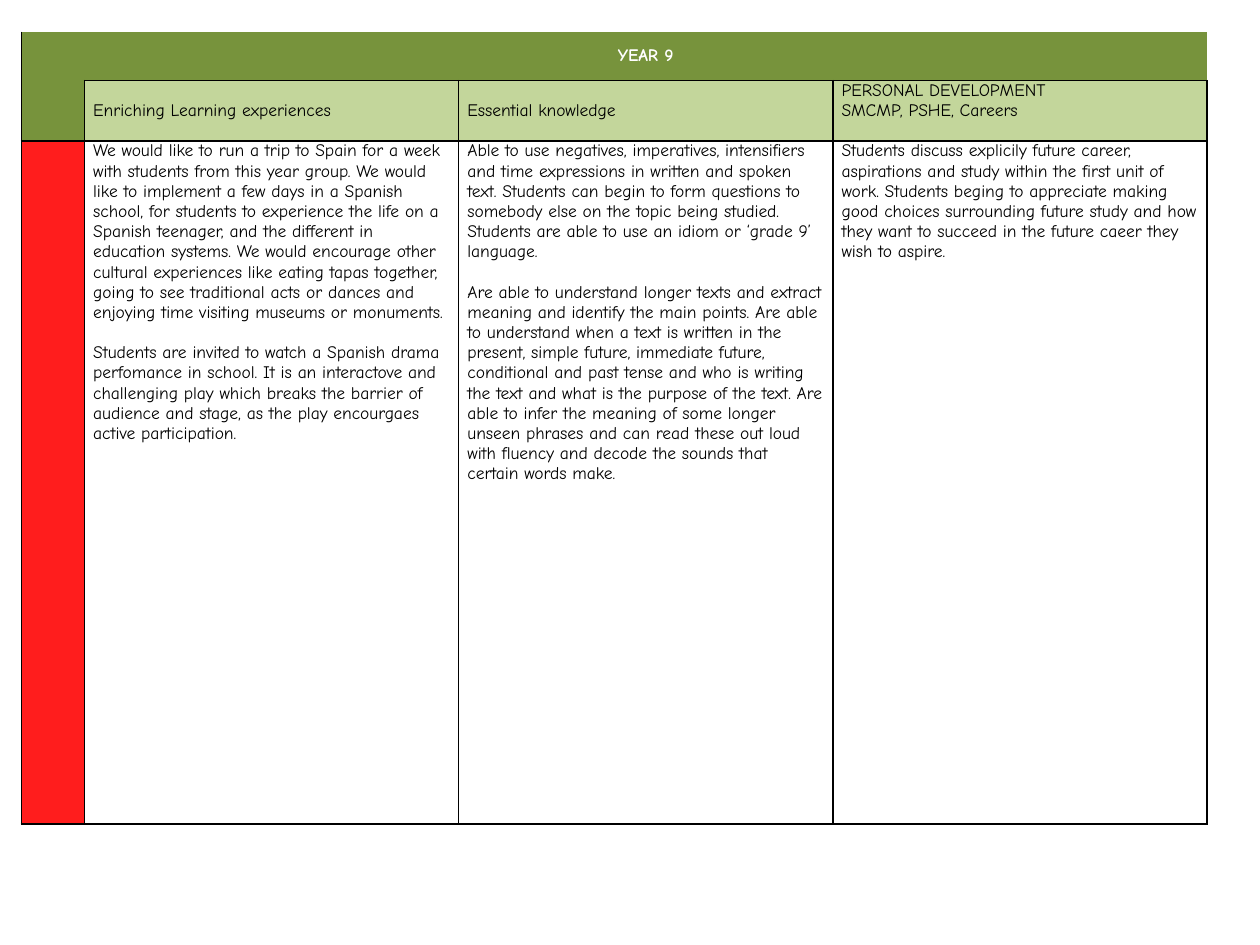
from lxml import etree
from pptx import Presentation
from pptx.dml.color import RGBColor
from pptx.enum.text import MSO_ANCHOR, PP_ALIGN
from pptx.oxml.ns import qn
from pptx.util import Inches, Pt

MIDDLE, TOP = MSO_ANCHOR.MIDDLE, MSO_ANCHOR.TOP
CENTER = PP_ALIGN.CENTER

GREEN = RGBColor(0x77, 0x93, 0x3C)
LIGHT_GREEN = RGBColor(0xC3, 0xD6, 0x9B)
RED = RGBColor(0xFF, 0x1D, 0x1D)
WHITE = RGBColor(0xFF, 0xFF, 0xFF)
BLACK = RGBColor(0, 0, 0)

FONT = "Comic Neue"
SIZE = Pt(10)
LINE = Pt(11.5)  # height of one text line
COL_WIDTHS = [0.5] + [2.97] * 3
ROW_HEIGHTS = [0.39, 0.48, 5.42]

HEADINGS = [
    ["Enriching Learning experiences"],
    ["Essential knowledge"],
    ["PERSONAL DEVELOPMENT", "SMCMP, PSHE, Careers"],
]
DETAILS = [
    ["We would like to run a trip to Spain for a week with students from this "
     "year group. We would like to implement a few days in a Spanish school, "
     "for students to experience the life on a Spanish teenager, and the "
     "different in education systems. We would encourage other cultural "
     "experiences like eating tapas together, going to see traditional acts or "
     "dances and enjoying time visiting museums or monuments.",
     "Students are invited to watch a Spanish drama perfomance in school. It is "
     "an interactove and challenging play which breaks the barrier of audience "
     "and stage, as the play encourgaes active participation."],
    ["Able to use negatives, imperatives, intensifiers and time expressions in "
     "written and spoken text. Students can begin to form questions to somebody "
     "else on the topic being studied. Students are able to use an idiom or "
     "‘grade 9’ language.",
     "Are able to understand longer texts and extract meaning and identify the "
     "main points. Are able to understand when a text is written in the present, "
     "simple future, immediate future, conditional and past tense and who is "
     "writing the text and what is the purpose of the text. Are able to infer "
     "the meaning of some longer unseen phrases and can read these out loud with "
     "fluency and decode the sounds that certain words make."],
    ["Students discuss explicily future career, aspirations and study within the "
     "first unit of work. Students beging to appreciate making good choices "
     "surrounding future study and how they want to succeed in the future caeer "
     "they wish to aspire."],
]


def set_borders(cell, sides):
    """Draw 1 pt black lines on the named sides and none on the others."""
    tc_pr = cell._tc.get_or_add_tcPr()
    for side in "LRTB":
        ln = etree.SubElement(tc_pr, qn(f"a:ln{side}"), w=str(Pt(1)))
        if side in sides:
            fill = etree.SubElement(ln, qn("a:solidFill"))
            etree.SubElement(fill, qn("a:srgbClr"), val=str(BLACK))
        else:
            etree.SubElement(ln, qn("a:noFill"))


def style_cell(cell, color, sides="LRTB"):
    set_borders(cell, sides)
    cell.fill.solid()
    cell.fill.fore_color.rgb = color
    cell.margin_left = cell.margin_right = Inches(0.07)
    cell.margin_top = cell.margin_bottom = 0
    cell.text_frame.paragraphs[0].font.size = SIZE


def write_cell(cell, lines, anchor=TOP, color=BLACK, bold=False, align=None, gap=0):
    cell.vertical_anchor = anchor
    tf = cell.text_frame
    tf.text = "\n".join(lines)
    for i, p in enumerate(tf.paragraphs):
        p.alignment = align
        p.space_before = gap if i else 0
        for r in p.runs:
            r.font.name, r.font.size, r.font.bold = FONT, SIZE, bold
            r.font.color.rgb = color


def add_grid(s):
    frame = s.shapes.add_table(
        len(ROW_HEIGHTS), len(COL_WIDTHS), Inches(0.17), Inches(0.25),
        Inches(sum(COL_WIDTHS)), Inches(sum(ROW_HEIGHTS)))
    table = frame.table
    table.first_row = table.horz_banding = False
    for column, width in zip(table.columns, COL_WIDTHS):
        column.width = Inches(width)
    for row, height in zip(table.rows, ROW_HEIGHTS):
        row.height = Inches(height)
    return table


def main():
    prs = Presentation()
    prs.slide_width, prs.slide_height = Inches(10), Inches(7.5)
    s = prs.slides.add_slide(prs.slide_layouts[6])
    table = add_grid(s)

    # Year band, open at the top, and the corner beside it
    for col, sides in enumerate(["L", "B", "B", "RB"]):
        style_cell(table.cell(0, col), GREEN, sides)
    style_cell(table.cell(1, 0), GREEN, "LRB")
    table.cell(0, 0).merge(table.cell(1, 0))
    table.cell(0, 1).merge(table.cell(0, 3))
    write_cell(table.cell(0, 1), ["YEAR 9"], MIDDLE, WHITE, True, CENTER)

    # Red side bar
    style_cell(table.cell(2, 0), RED)

    # Column headings and their details
    for col, (heading, details) in enumerate(zip(HEADINGS, DETAILS), start=1):
        style_cell(table.cell(1, col), LIGHT_GREEN)
        write_cell(table.cell(1, col), heading, MIDDLE)
        style_cell(table.cell(2, col), WHITE)
        write_cell(table.cell(2, col), details, gap=LINE)
    table.cell(1, 3).margin_bottom = LINE  # lifts the two-line heading

    prs.save("out.pptx")


if __name__ == "__main__":
    main()
